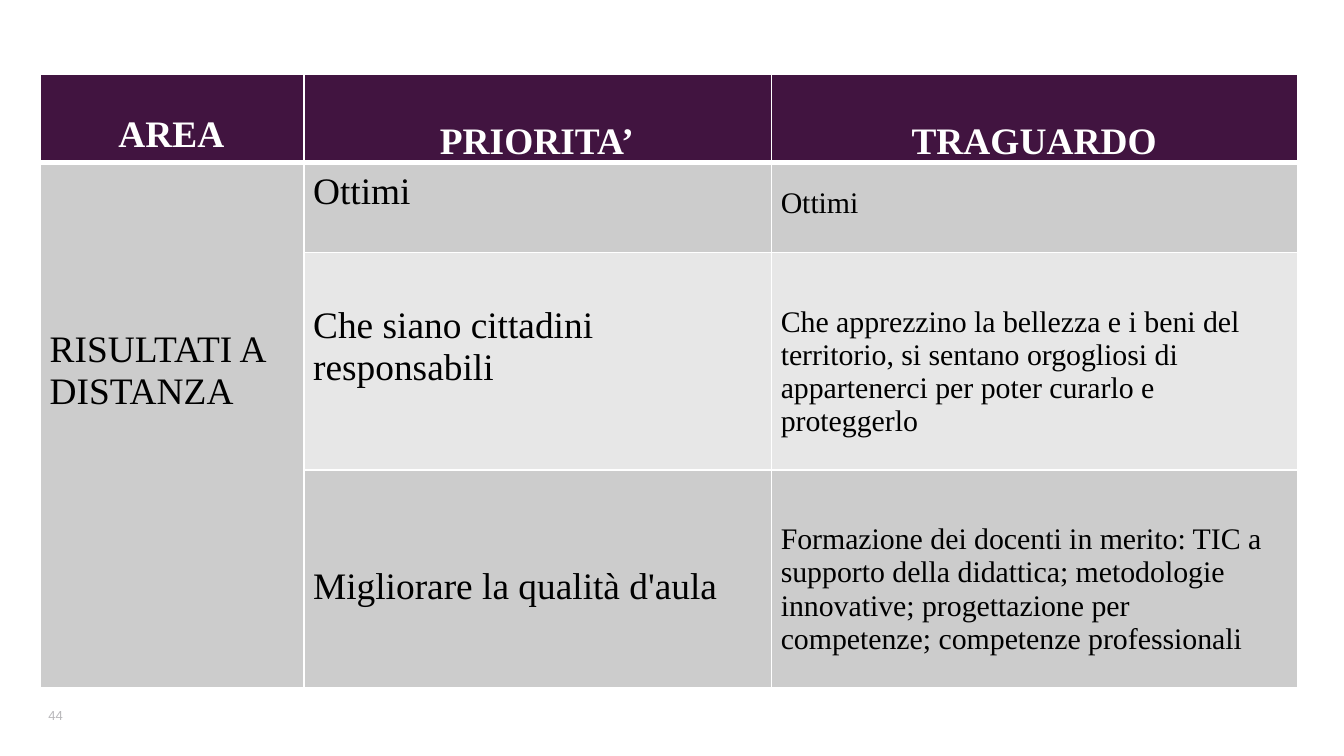
"""Build a slide with a table of priorities and goals for long-term results."""
from dataclasses import dataclass

from lxml.etree import SubElement
from pptx import Presentation
from pptx.dml.color import RGBColor
from pptx.enum.text import MSO_ANCHOR, PP_ALIGN
from pptx.oxml.ns import qn
from pptx.util import Inches, Pt


@dataclass(frozen=True)
class Theme:
    purple: str = "411440"
    dark_band: str = "CCCCCC"
    light_band: str = "E7E7E7"
    white: str = "FFFFFF"
    black: str = "000000"
    number_grey: str = "B9B8BB"
    table_font: str = "Times New Roman"
    number_font: str = "Arial"
    large: int = 20
    medium: int = 16
    small: int = 7


def style_font(paragraph, name, size, color, bold=False):
    paragraph.font.name = name
    paragraph.font.size = Pt(size)
    paragraph.font.bold = bold
    paragraph.font.color.rgb = RGBColor.from_string(color)


def add_border(cell, side, width, color):
    line = SubElement(cell._tc.get_or_add_tcPr(), qn(f"a:{side}"), w=str(Pt(width)))
    fill = SubElement(line, qn("a:solidFill"))
    SubElement(fill, qn("a:srgbClr"), val=color)


theme = Theme()
presentation = Presentation()
presentation.slide_width = Inches(10)
presentation.slide_height = Inches(10) * 9 // 16
slide = presentation.slides.add_slide(presentation.slide_layouts[6])

number_box = slide.shapes.add_textbox(Inches(0.36), Inches(5.24), Inches(0.35), Inches(0.16))
number_frame = number_box.text_frame
number_frame.margin_left = 0
number_frame.vertical_anchor = MSO_ANCHOR.MIDDLE
number_frame.word_wrap = False
number_frame.text = "44"
style_font(number_frame.paragraphs[0], theme.number_font, theme.small, theme.number_grey)

column_widths = [1.96, 3.48, 3.92]
row_heights = [0.66, 0.67, 1.62, 1.62]
row_fills = [theme.purple, theme.dark_band, theme.light_band, theme.dark_band]
texts = [
    ["AREA", "PRIORITA’", "TRAGUARDO"],
    ["RISULTATI A DISTANZA", "Ottimi", "Ottimi"],
    ["", "Che siano cittadini responsabili",
     "Che apprezzino la bellezza e i beni del territorio, si sentano orgogliosi di "
     "appartenerci per poter curarlo e proteggerlo"],
    ["", "Migliorare la qualità d'aula",
     "Formazione dei docenti in merito: TIC a supporto della didattica; metodologie "
     "innovative; progettazione per competenze; competenze professionali"],
]
bottom_margins = [[0.05, 0, 0], [0, 0.3, 0.24], [0, 0.61, 0.24], [0, 0.6, 0.24]]

table = slide.shapes.add_table(
    len(row_heights), len(column_widths), Inches(0.3), Inches(0.55),
    Inches(sum(column_widths)), Inches(sum(row_heights)),
).table
for column, width in zip(table.columns, column_widths):
    column.width = Inches(width)
for row, height in zip(table.rows, row_heights):
    row.height = Inches(height)

for row_index, row_texts in enumerate(texts):
    header = row_index == 0
    for column_index, text in enumerate(row_texts):
        cell = table.cell(row_index, column_index)
        cell.margin_left = Inches(0.07)
        cell.margin_right = Inches(0.08)
        cell.margin_top = 0
        cell.margin_bottom = Inches(bottom_margins[row_index][column_index])
        cell.vertical_anchor = MSO_ANCHOR.BOTTOM
        for side in ("lnL", "lnR", "lnT", "lnB"):
            thick = (row_index, side) in ((0, "lnB"), (1, "lnT"))
            add_border(cell, side, 3 if thick else 1, theme.white)
        cell.fill.solid()
        cell.fill.fore_color.rgb = RGBColor.from_string(row_fills[row_index])
        if text:
            cell.text = text
            paragraph = cell.text_frame.paragraphs[0]
            paragraph.alignment = PP_ALIGN.CENTER if header else PP_ALIGN.LEFT
            size = theme.medium if column_index == 2 and not header else theme.large
            color = theme.white if header else theme.black
            style_font(paragraph, theme.table_font, size, color, header)

area_cell = table.cell(1, 0)
area_cell.merge(table.cell(3, 0))
area_cell.vertical_anchor = MSO_ANCHOR.TOP
area_cell.margin_top = Inches(1.24)

presentation.save("out.pptx")
